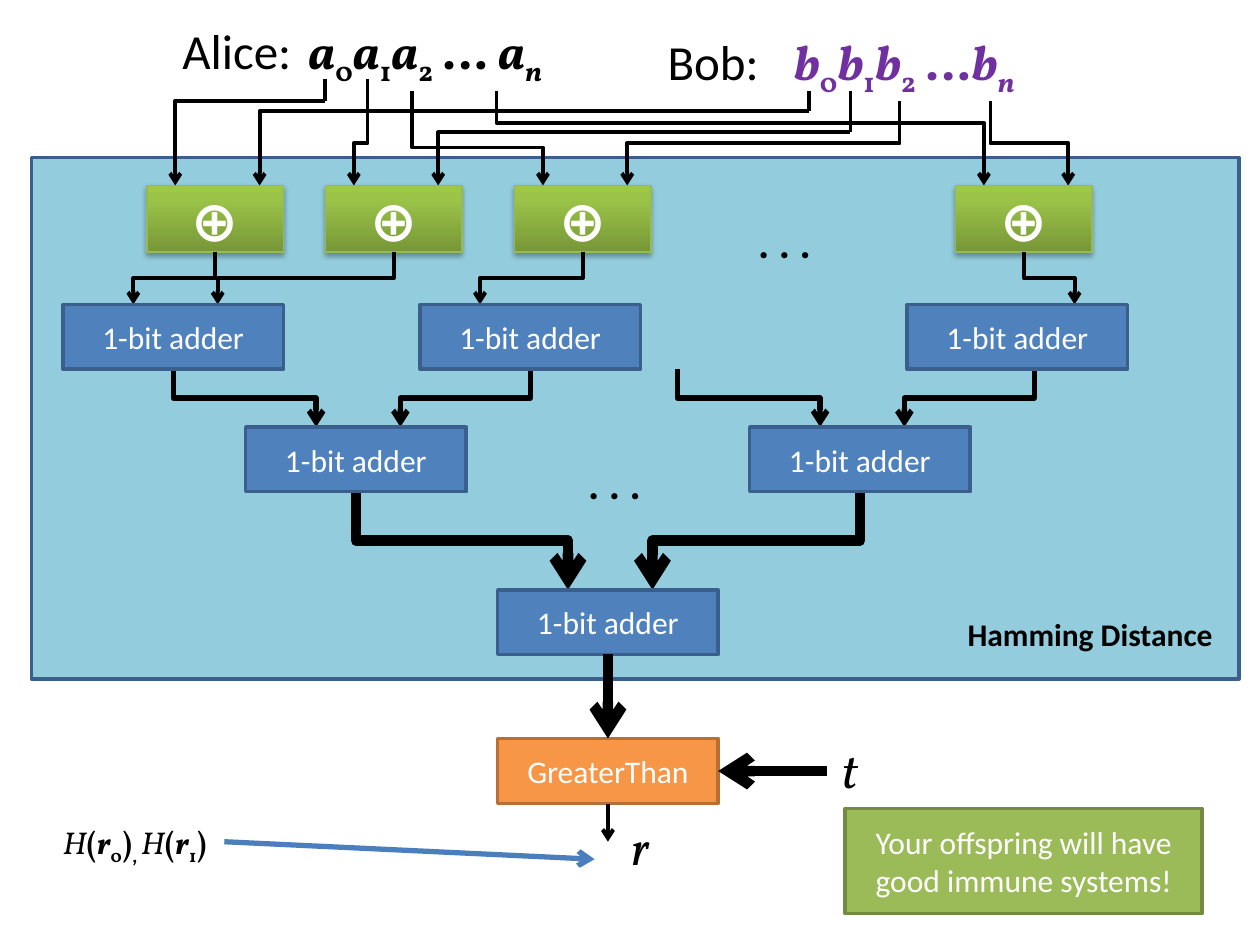
import copy
from dataclasses import dataclass
from typing import NamedTuple, Optional

import pptx
import pptx.dml.color
import pptx.enum.shapes
import pptx.enum.text
import pptx.oxml
import pptx.oxml.ns
import pptx.util

Pt = pptx.util.Pt
RGB = pptx.dml.color.RGBColor.from_string
qn = pptx.oxml.ns.qn
CONNECTOR = pptx.enum.shapes.MSO_CONNECTOR
TOP, RIGHT, BOTTOM = 0, 3, 2


@dataclass(frozen=True)
class Theme:
    sans: str = "Calibri"
    serif: str = "Vollkorn"
    black: str = "000000"
    white: str = "FFFFFF"
    purple: str = "7030A0"
    panel: str = "93CDDD"
    blue: str = "4F81BD"
    blue_edge: str = "3A5F8C"
    orange: str = "F79646"
    orange_edge: str = "B76F34"
    green: str = "9BBB59"
    green_edge: str = "738A42"
    gate_edge: str = "98B955"
    gate_stops: tuple = ((0, "779737"), (0.8, "9BC348"), (1, "9DC746"))
    pointer: str = "4B7EBC"
    label: int = 18
    dots: int = 24
    variable: int = 28
    symbol: int = 32
    thin: float = 2.25
    medium: float = 3
    thick: float = 6


class Box(NamedTuple):
    x: float
    y: float
    w: float
    h: float


class Run(NamedTuple):
    text: str
    bold: bool = False
    italic: bool = False
    sub: bool = False
    serif: bool = True
    color: str = "000000"


class Input(NamedTuple):
    """A bit leaving its letter; turn is None when the wire first runs sideways."""
    x: float
    y: float
    stub: float
    gate: int
    port: int
    turn: Optional[float]


T = Theme()
GATE_PORTS = (16.2, 64.4)
ADDER_PORTS = (40.2, 88.4)
GATES = [Box(x, 106, 78, 38) for x in (84, 186, 294, 546)]
ADDERS = [Box(x, y, 126, 37) for x, y in
          ((36, 174), (240, 174), (518.4, 174), (140.4, 244), (428.4, 244), (284.4, 337))]
COMPARE = Box(284.4, 422, 126, 37.2)
INPUTS = [
    Input(185.8, 45.4, 57.6, 0, 0, None), Input(462.2, 51.8, 63.4, 0, 1, None),
    Input(210, 45.4, 57.6, 1, 0, 0.5), Input(486, 51.8, 75.6, 1, 1, None),
    Input(235.4, 51.8, 51.8, 2, 0, 0.6), Input(514, 57.6, 57.6, 2, 1, 0.5),
    Input(283.7, 51.8, 51.8, 3, 0, 0.34), Input(566, 57.6, 57.6, 3, 1, 0.5),
]


def add_runs(tf, runs, size: float, align=None) -> None:
    p = tf.paragraphs[0]
    p.alignment = align
    for run in runs:
        r = p.add_run()
        r.text = run.text
        r.font.name = T.serif if run.serif else T.sans
        r.font.size = Pt(size)
        r.font.bold, r.font.italic = run.bold, run.italic
        r.font.color.rgb = RGB(run.color)
        if run.sub:
            r.font._element.set("baseline", "-25000")


def add_text(s, box: Box, runs, size: float) -> None:
    tf = s.shapes.add_textbox(*map(Pt, box)).text_frame
    tf.word_wrap = False
    tf.auto_size = pptx.enum.text.MSO_AUTO_SIZE.SHAPE_TO_FIT_TEXT
    add_runs(tf, runs, size)


def add_box(s, box: Box, fill: str, edge: str, text: str = "", size: float = T.label,
            bold: bool = False, edge_width: float = 2):
    sp = s.shapes.add_shape(pptx.enum.shapes.MSO_SHAPE.RECTANGLE, *map(Pt, box))
    sp.shadow.inherit = False
    sp.fill.solid()
    sp.fill.fore_color.rgb = RGB(fill)
    sp.line.color.rgb = RGB(edge)
    sp.line.width = Pt(edge_width)
    if text:
        sp.text_frame.word_wrap = True
        sp.text_frame.vertical_anchor = pptx.enum.text.MSO_ANCHOR.MIDDLE
        add_runs(sp.text_frame, [Run(text, bold, serif=False, color=T.white)], size,
                 pptx.enum.text.PP_ALIGN.CENTER)
    return sp


def add_gate(s, box: Box) -> None:
    """XOR gate with a gradient and a soft shadow below."""
    sp = add_box(s, box, T.green, T.gate_edge, "⊕", T.symbol, True, 0.75)
    sp.fill.gradient()
    sp.fill.gradient_angle = 90
    stops = sp._element.spPr.find(".//" + qn("a:gsLst"))
    stops.append(copy.deepcopy(stops[-1]))
    for stop, (position, color) in zip(sp.fill.gradient_stops, T.gate_stops):
        stop.position = position
        stop.color.rgb = RGB(color)
    sp._element.spPr.find(qn("a:effectLst")).append(pptx.oxml.parse_xml(
        f'<a:outerShdw {pptx.oxml.ns.nsdecls("a")} blurRad="{Pt(3.1)}" dist="{Pt(1.8)}" '
        'dir="5400000" rotWithShape="0"><a:srgbClr val="000000"><a:alpha val="35000"/>'
        '</a:srgbClr></a:outerShdw>'))


def add_line(s, x1: float, y1: float, x2: float, y2: float, width: float = T.thin,
             color: str = T.black, arrow: bool = True, kind=CONNECTOR.STRAIGHT):
    c = s.shapes.add_connector(kind, Pt(x1), Pt(y1), Pt(x2), Pt(y2))
    c.line.color.rgb = RGB(color)
    c.line.width = Pt(width)
    if arrow:
        pptx.oxml.xmlchemy.OxmlElement
        end = pptx.oxml.parse_xml(f'<a:tailEnd {pptx.oxml.ns.nsdecls("a")} type="arrow"/>')
        c.line._get_or_add_ln().append(end)
    c._element.spPr.append(pptx.oxml.parse_xml(f'<a:effectLst {pptx.oxml.ns.nsdecls("a")}/>'))
    return c


def add_corner(s, x1: float, y1: float, x2: float, y2: float) -> None:
    """Wire that runs sideways, then down."""
    c = add_line(s, x1, y1, x2, y2, kind=CONNECTOR.ELBOW)
    c._element.spPr.find(qn("a:prstGeom")).set("prst", "bentConnector2")


def add_step(s, x1: float, y1: float, x2: float, y2: float, width: float = T.thin,
             turn: float = 0.5) -> None:
    """Wire that runs down, sideways and down: an elbow turned by a quarter."""
    cx, cy = (x1 + x2) / 2, (y1 + y2) / 2
    side = 1 if x2 < x1 else -1
    a, b = side * (y2 - y1) / 2, abs(x2 - x1) / 2
    c = add_line(s, cx - a, cy - b, cx + a, cy + b, width, kind=CONNECTOR.ELBOW)
    c._element.spPr.find(qn("a:xfrm")).set("rot", str((90 if side > 0 else 270) * 60000))
    c._element.spPr.find(".//" + qn("a:avLst")).append(pptx.oxml.parse_xml(
        f'<a:gd {pptx.oxml.ns.nsdecls("a")} name="adj1" fmla="val {round(turn * 100000)}"/>'))


def bit_string(name: str, letter: str, dots: str, color: str) -> list:
    runs = [Run(f"{name}:\t", serif=False)]
    for digit in "012":
        runs += [Run(letter, True, True, color=color), Run(digit, True, sub=True, color=color)]
    return runs + [Run(dots, True, color=color), Run(letter, True, True, color=color),
                   Run("n", True, True, True, color=color)]


def hash_of(digit: str) -> list:
    return [Run("H", italic=True), Run("(", True), Run("r", True, True),
            Run(digit, True, sub=True), Run(")", True)]


def main() -> None:
    prs = pptx.Presentation()
    prs.slide_width, prs.slide_height = Pt(720), Pt(540)
    s = prs.slides.add_slide(prs.slide_layouts[6])

    add_box(s, Box(18, 90, 690, 298), T.panel, T.blue_edge)
    for gate in GATES:
        add_gate(s, gate)
    add_text(s, Box(97.2, 8, 232.6, 41), bit_string("Alice", "a", " … ", T.black), T.variable)
    add_text(s, Box(374.4, 14.4, 223.2, 41), bit_string("Bob", "b", " …", T.purple), T.variable)

    for bit in INPUTS:
        gate = GATES[bit.gate]
        port = gate.x + GATE_PORTS[bit.port]
        if bit.stub > bit.y:
            add_line(s, bit.x, bit.y, bit.x, bit.stub, arrow=False)
        if bit.turn is None:
            add_corner(s, bit.x, bit.stub, port, gate.y)
        else:
            add_step(s, bit.x, bit.stub, port, gate.y, turn=bit.turn)

    for gate, x in zip(GATES, (76.2, 124.4, 274.3, 614)):
        add_step(s, gate.x + gate.w / 2, gate.y + gate.h, x, ADDERS[0].y)
    # start x, source row, target adder, target port, width
    for x, source, target, port, width in (
            (99, 0, 3, 0, T.medium), (303, 0, 3, 1, T.medium),
            (387, 0, 4, 0, T.medium), (591, 0, 4, 1, T.medium),
            (203.4, 3, 5, 0, T.thick), (491.4, 3, 5, 1, T.thick)):
        start, end = ADDERS[source], ADDERS[target]
        add_step(s, x, start.y + start.h, end.x + ADDER_PORTS[port], end.y, width)

    for box in (Box(426.2, 120.2, 44.6, 36), Box(329, 257.8, 44.6, 36)):
        add_text(s, box, [Run(". . .", True, serif=False)], T.dots)
    add_text(s, Box(545.8, 347.8, 155.5, 22.3),
             [Run("Hamming Distance", True, serif=False)], T.label)

    adders = [add_box(s, box, T.blue, T.blue_edge, "1-bit adder") for box in ADDERS]
    compare = add_box(s, COMPARE, T.orange, T.orange_edge, "GreaterThan")
    middle = COMPARE.x + COMPARE.w / 2
    base = COMPARE.y + COMPARE.h
    c = add_line(s, middle, 374, middle, COMPARE.y, T.thick)
    c.begin_connect(adders[-1], BOTTOM)
    c.end_connect(compare, TOP)
    c = add_line(s, 472.4, 440.6, COMPARE.x + COMPARE.w, 440.6, T.thick)
    c.end_connect(compare, RIGHT)
    c = add_line(s, middle, base, middle, 481)
    c.begin_connect(compare, BOTTOM)

    add_text(s, Box(473.8, 419, 23.8, 41), [Run("t", italic=True)], T.variable)
    add_text(s, Box(353.5, 463, 25.2, 41), [Run("r", italic=True)], T.variable)
    add_text(s, Box(28.8, 466.6, 99.4, 28.8),
             hash_of("0") + [Run(", ", True, sub=True)] + hash_of("1"), T.label)
    add_line(s, 128.2, 481, 339.8, 491, T.medium, T.pointer)
    add_box(s, Box(483, 462, 204, 60), T.green, T.green_edge,
            "Your offspring will have good immune systems!")
    prs.save("out.pptx")


if __name__ == "__main__":
    main()
